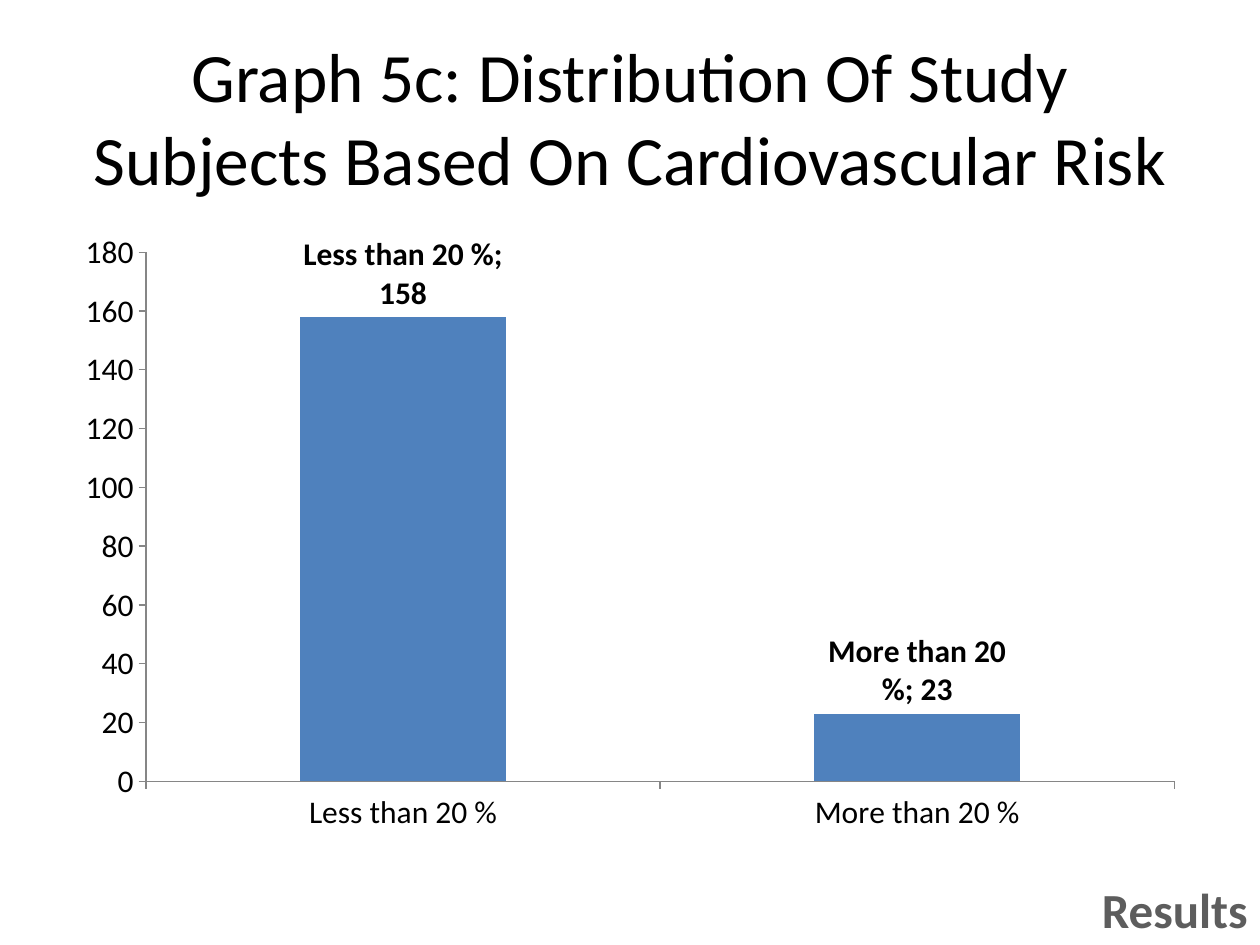
from lxml import etree
from pptx import Presentation
from pptx.chart.data import CategoryChartData
from pptx.dml.color import RGBColor
from pptx.enum.chart import XL_CHART_TYPE, XL_LABEL_POSITION, XL_TICK_MARK
from pptx.enum.text import MSO_ANCHOR, PP_ALIGN
from pptx.oxml.ns import qn
from pptx.util import Cm, Pt

COLUMNS = XL_CHART_TYPE.COLUMN_CLUSTERED
ABOVE_BAR = XL_LABEL_POSITION.OUTSIDE_END
TICK_OUT = XL_TICK_MARK.OUTSIDE
MIDDLE, TOP = MSO_ANCHOR.MIDDLE, MSO_ANCHOR.TOP
CENTER, RIGHT = PP_ALIGN.CENTER, PP_ALIGN.RIGHT

FONT = "Calibri"
COLORS = {
    "background": "FFFFFF",
    "text": "000000",
    "section": "5D5D5D",
    "bar": "4F81BD",
    "axis": "868686",
}
RISK_COUNTS = {"Less than 20 %": 158, "More than 20 %": 23}


def color(name):
    return RGBColor.from_string(COLORS[name])


def style_font(font, size, color_name, bold=False):
    font.name = FONT
    font.size = Pt(size)
    font.bold = bold
    font.color.rgb = color(color_name)


def add_line_of_text(slide, box, wording, size, color_name, align, anchor, bold=False):
    frame = slide.shapes.add_textbox(*box).text_frame
    frame.word_wrap = True
    frame.vertical_anchor = anchor
    paragraph = frame.paragraphs[0]
    paragraph.alignment = align
    run = paragraph.add_run()
    run.text = wording
    style_font(run.font, size, color_name, bold)


def add_title(slide, box):
    add_line_of_text(
        slide, box,
        "Graph 5c: Distribution Of Study Subjects Based On Cardiovascular Risk",
        39.6, "text", CENTER, MIDDLE)


def add_section_label(slide, box):
    add_line_of_text(slide, box, "Results", 28, "section", RIGHT, TOP, bold=True)


def label_bars(plot):
    """Show category and count above each bar, parted by a semicolon."""
    plot.has_data_labels = True
    labels = plot.data_labels
    labels.show_category_name = True
    labels.show_value = True
    labels.position = ABOVE_BAR
    style_font(labels.font, 18, "text", bold=True)
    separator = etree.Element(qn("c:separator"))
    separator.text = "; "
    labels._element.find(qn("c:showBubbleSize")).addnext(separator)


def add_risk_chart(slide, box):
    counts = CategoryChartData(number_format="General")
    counts.categories = list(RISK_COUNTS)
    counts.add_series("Series 1", list(RISK_COUNTS.values()))
    chart = slide.shapes.add_chart(COLUMNS, *box, counts).chart
    chart.has_legend = False
    chart.has_title = False
    style_font(chart.font, 18, "text")

    plot = chart.plots[0]
    plot.gap_width = 150
    plot.vary_by_categories = False
    bars = plot.series[0].format.fill
    bars.solid()
    bars.fore_color.rgb = color("bar")
    label_bars(plot)

    for axis in (chart.category_axis, chart.value_axis):
        axis.has_major_gridlines = False
        axis.major_tick_mark = TICK_OUT
        axis.format.line.color.rgb = color("axis")
        axis.format.line.width = Pt(0.75)
    chart.value_axis.minimum_scale = 0
    chart.value_axis.maximum_scale = 180
    chart.value_axis.major_unit = 20


def main():
    deck = Presentation()
    deck.slide_width, deck.slide_height = Cm(25.4), Cm(19.05)
    slide = deck.slides.add_slide(deck.slide_layouts[6])
    slide.background.fill.solid()
    slide.background.fill.fore_color.rgb = color("background")

    margin = Cm(1.27)
    content_width = deck.slide_width - 2 * margin
    add_title(slide, (margin, Cm(0.76), content_width, Cm(3.18)))
    add_risk_chart(slide, (margin, Cm(4.45), content_width, Cm(12.57)))
    add_section_label(slide, (0, Cm(17.6), deck.slide_width, Cm(1.45)))
    deck.save("out.pptx")


if __name__ == "__main__":
    main()
